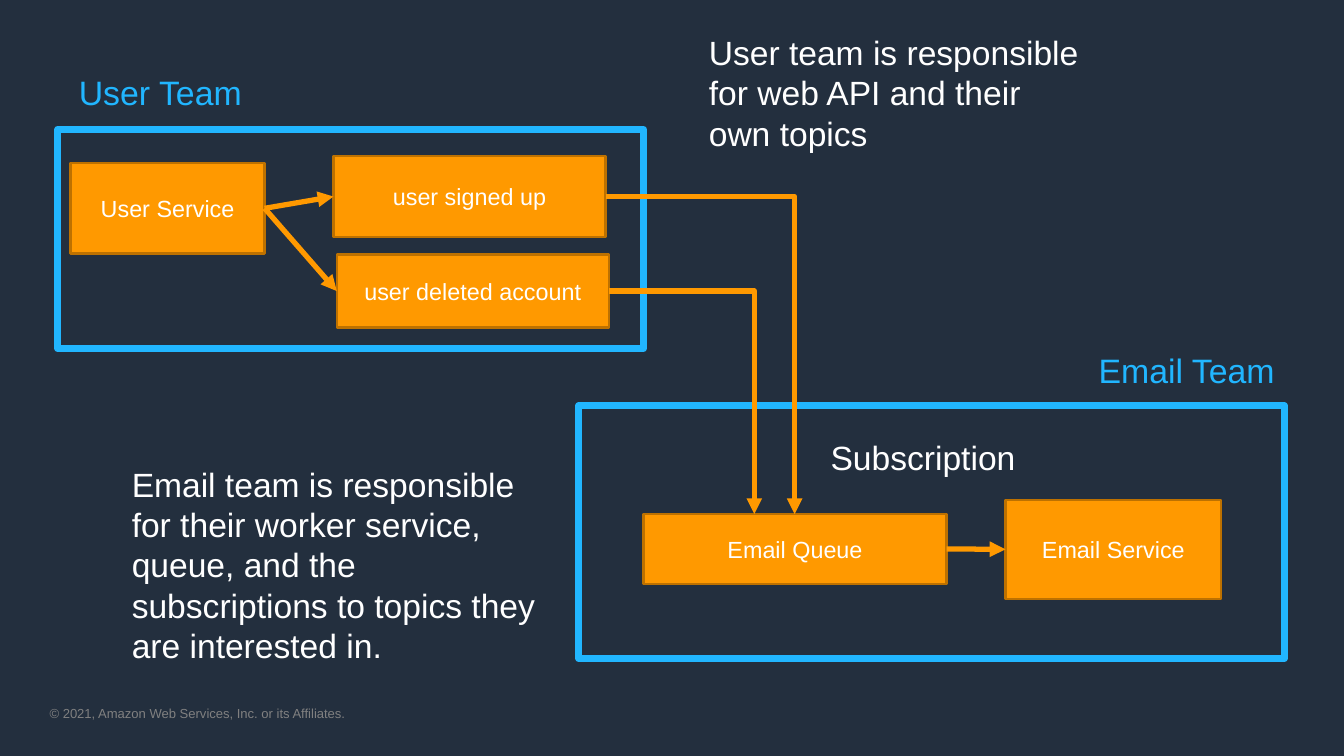
from dataclasses import dataclass

from lxml.etree import SubElement
from pptx import Presentation
from pptx.dml.color import RGBColor
from pptx.enum.shapes import MSO_CONNECTOR, MSO_SHAPE
from pptx.enum.text import MSO_ANCHOR, PP_ALIGN
from pptx.oxml.ns import qn
from pptx.shapes.autoshape import Shape
from pptx.shapes.connector import Connector
from pptx.slide import Slide
from pptx.util import Inches, Pt

NAVY = RGBColor(0x23, 0x2F, 0x3E)
ORANGE = RGBColor(0xFF, 0x99, 0x00)
BROWN = RGBColor(0xBD, 0x71, 0x00)
BLUE = RGBColor(0x21, 0xB6, 0xFF)
WHITE = RGBColor(0xFF, 0xFF, 0xFF)
GRAY = RGBColor(0x80, 0x80, 0x80)
FONT = "Arial"
RIGHT_SITE, LEFT_SITE = 3, 1


@dataclass(frozen=True)
class Area:
    left: float
    top: float
    width: float
    height: float

    @property
    def right(self) -> float:
        return self.left + self.width

    @property
    def middle(self) -> float:
        return self.top + self.height / 2

    def lengths(self) -> list[int]:
        return [Inches(v) for v in (self.left, self.top, self.width, self.height)]


@dataclass(frozen=True)
class Label:
    text: str
    area: Area
    size: float = 28.8
    color: RGBColor = WHITE
    inset: bool = True


# Content
TEAM_FRAMES = [Area(0.69, 1.54, 6.97, 2.61), Area(6.89, 4.83, 8.4, 3.01)]
BOXES = {
    "User Service": Area(0.84, 1.94, 2.31, 1.08),
    "user signed up": Area(3.97, 1.86, 3.24, 0.96),
    "user deleted account": Area(4.01, 3.03, 3.24, 0.87),
    "Email Queue": Area(7.66, 6.12, 3.61, 0.83),
    "Email Service": Area(11.97, 5.95, 2.57, 1.18),
}
DIRECT_FLOWS = [
    ("User Service", "user signed up"),
    ("User Service", "user deleted account"),
    ("Email Queue", "Email Service"),
]
# Each topic drops onto the top edge of the queue at this x position
SUBSCRIPTIONS = {"user signed up": 9.46, "user deleted account": 8.98}
LABELS = [
    Label("User Team", Area(0.84, 0.81, 3.94, 0.59), 29, BLUE),
    Label("Email Team", Area(12.98, 4.11, 3, 0.59), 29, BLUE),
    Label("Subscription", Area(9.79, 5.15, 2.57, 0.59)),
    Label("User team is responsible for web API and their own topics",
          Area(8.34, 0.33, 4.68, 1.56)),
    Label("Email team is responsible for their worker service, queue, and the "
          "subscriptions to topics they are interested in.",
          Area(1.47, 5.47, 5.22, 2.52)),
    Label("© 2021, Amazon Web Services, Inc. or its Affiliates.",
          Area(0.59, 8.4, 7.78, 0.19), 11.2, GRAY, inset=False),
]


def write(shape: Shape, text: str, size: float, color: RGBColor) -> None:
    shape.text_frame.word_wrap = True
    paragraph = shape.text_frame.paragraphs[0]
    paragraph.text = text
    paragraph.font.name = FONT
    paragraph.font.size = Pt(size)
    paragraph.font.color.rgb = color


def add_rectangle(slide: Slide, area: Area, outline: RGBColor, weight: float) -> Shape:
    rectangle = slide.shapes.add_shape(MSO_SHAPE.RECTANGLE, *area.lengths())
    rectangle.shadow.inherit = False
    rectangle.fill.background()
    rectangle.line.color.rgb = outline
    rectangle.line.width = Pt(weight)
    return rectangle


def add_box(slide: Slide, text: str, area: Area) -> Shape:
    box = add_rectangle(slide, area, BROWN, 2)
    box.fill.solid()
    box.fill.fore_color.rgb = ORANGE
    write(box, text, 20, WHITE)
    box.text_frame.vertical_anchor = MSO_ANCHOR.MIDDLE
    box.text_frame.paragraphs[0].alignment = PP_ALIGN.CENTER
    return box


def add_arrow(slide: Slide, kind: MSO_CONNECTOR, start: tuple[float, float],
              end: tuple[float, float]) -> Connector:
    arrow = slide.shapes.add_connector(kind, *(Inches(v) for v in (*start, *end)))
    arrow.line.color.rgb = ORANGE
    arrow.line.width = Pt(4.5)
    properties = arrow._element.spPr
    SubElement(properties.find(qn("a:ln")), qn("a:tailEnd"), type="triangle")
    SubElement(properties, qn("a:effectLst"))
    return arrow


def add_label(slide: Slide, label: Label) -> None:
    text_box = slide.shapes.add_textbox(*label.area.lengths())
    write(text_box, label.text, label.size, label.color)
    if not label.inset:
        frame = text_box.text_frame
        frame.margin_left = frame.margin_right = 0
        frame.margin_top = frame.margin_bottom = 0


def main() -> None:
    presentation = Presentation()
    presentation.slide_width, presentation.slide_height = Inches(16), Inches(9)
    slide = presentation.slides.add_slide(presentation.slide_layouts[6])
    slide.background.fill.solid()
    slide.background.fill.fore_color.rgb = NAVY

    # Team frames and the services, topics and queue inside them
    for frame in TEAM_FRAMES:
        add_rectangle(slide, frame, BLUE, 6)
    boxes = {text: add_box(slide, text, area) for text, area in BOXES.items()}

    # Straight arrows within a team
    for source, target in DIRECT_FLOWS:
        start, end = BOXES[source], BOXES[target]
        arrow = add_arrow(slide, MSO_CONNECTOR.STRAIGHT,
                          (start.right, start.middle), (end.left, end.middle))
        arrow.begin_connect(boxes[source], RIGHT_SITE)
        arrow.end_connect(boxes[target], LEFT_SITE)

    # Single-bend arrows from the topics to the queue
    for topic, drop in SUBSCRIPTIONS.items():
        start = BOXES[topic]
        arrow = add_arrow(slide, MSO_CONNECTOR.ELBOW, (start.right, start.middle),
                          (drop, BOXES["Email Queue"].top))
        arrow._element.spPr.find(qn("a:prstGeom")).set("prst", "bentConnector2")

    # Team names, explanations and copyright line
    for label in LABELS:
        add_label(slide, label)

    presentation.save("out.pptx")


if __name__ == "__main__":
    main()
